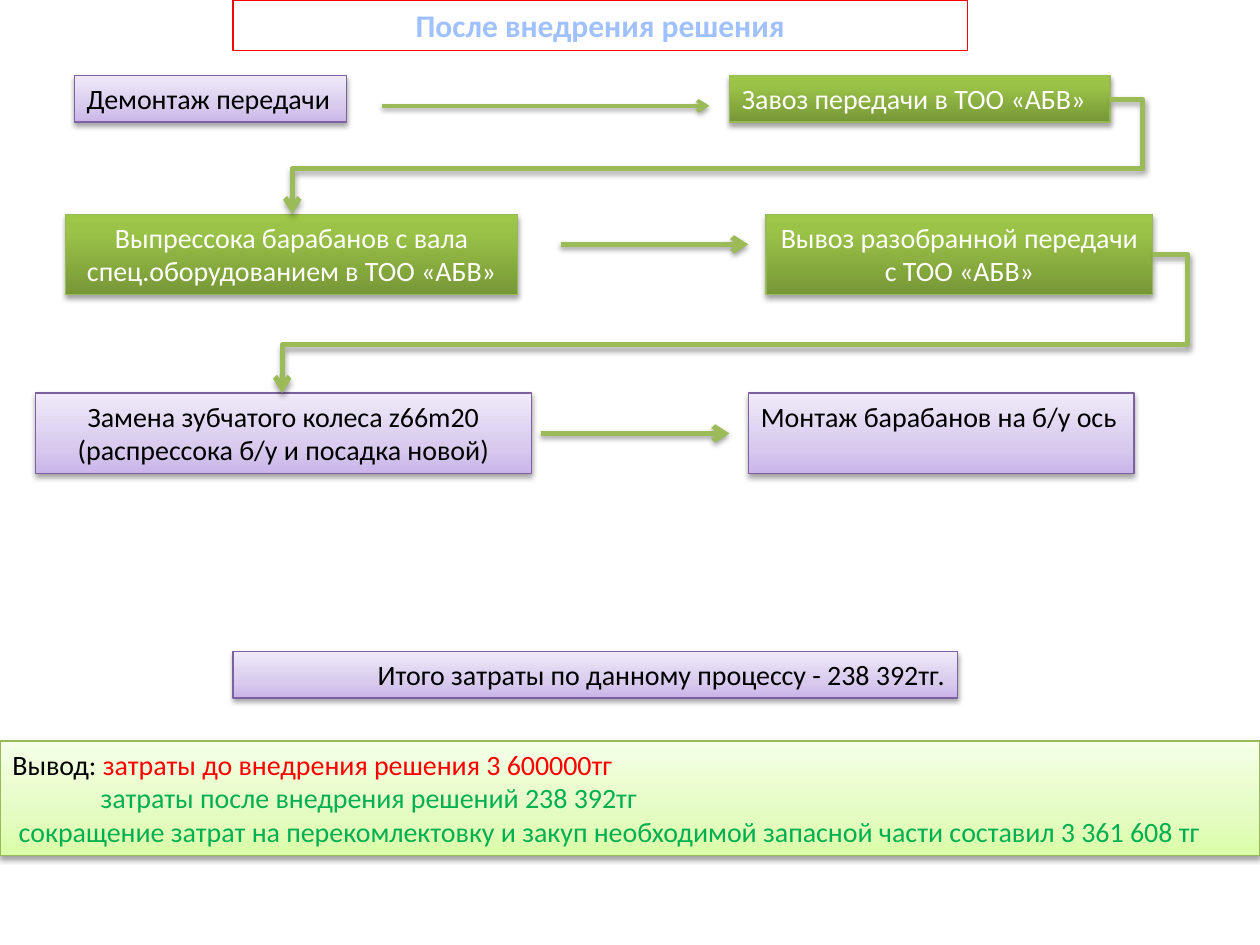
from lxml.etree import SubElement as Sub
from pptx import Presentation
from pptx.dml.color import RGBColor as RGB
from pptx.enum.shapes import MSO_CONNECTOR as Link, MSO_SHAPE as Shape
from pptx.enum.text import MSO_ANCHOR as Anchor, PP_ALIGN as Align
from pptx.oxml.ns import qn
from pptx.util import Inches, Pt

COLORS = {
    "black": "000000", "white": "FFFFFF", "red": "FF0000",
    "green": "00B050", "title": "A0C1FF", "arrow": "9BBB59",
}
# Each look: border, gradient stops from bottom to top
LOOKS = {
    "violet": ("7D60A0", [(0, "C9B5E8"), (35, "D8CBEE"), (100, "F0EAF9")]),
    "olive": ("98B955", [(0, "779737"), (80, "9BC348"), (100, "9DC746")]),
    "lime": ("98B955", [(0, "DAFDA7"), (35, "E4FCC2"), (100, "F5FFE7")]),
    "plain": ("FF0000", []),
}
COLS, ROWS = 100, 75


class Board:
    """Draws on one slide; lengths are columns and rows of a 100 x 75 grid."""

    font, size = "Calibri", 16

    def __init__(self, deck):
        self.slide = deck.slides.add_slide(deck.slide_layouts[6])
        self.col = deck.slide_width / COLS
        self.row = deck.slide_height / ROWS

    def spot(self, x, y):
        return round(x * self.col), round(y * self.row)

    def shade(self, effects):
        shadow = Sub(effects, qn("a:outerShdw"), blurRad=str(Pt(3.1)),
                     dist=str(Pt(1.7)), dir="5400000", rotWithShape="0")
        color = Sub(shadow, qn("a:srgbClr"), val=COLORS["black"])
        Sub(color, qn("a:alpha"), val="37000")

    def blend(self, shape, stops):
        fill = shape.fill
        fill.gradient()
        fill.gradient_angle = 90
        group = shape.element.spPr.find(".//" + qn("a:gsLst"))
        for old in list(group):
            group.remove(old)
        for share, color in stops:
            stop = Sub(group, qn("a:gs"), pos=str(share * 1000))
            Sub(stop, qn("a:srgbClr"), val=color)

    def box(self, x, y, w, h, look, lines, align=Align.LEFT, wrap=False):
        """Each line is (indent in columns, [(text, colour), ...])."""
        shape = self.slide.shapes.add_shape(
            Shape.RECTANGLE, *self.spot(x, y), *self.spot(w, h))
        edge, stops = LOOKS[look]
        shape.line.color.rgb = RGB.from_string(edge)
        shape.line.width = Pt(0.75)
        shape.shadow.inherit = False
        if stops:
            self.blend(shape, stops)
            self.shade(shape.element.spPr.find(qn("a:effectLst")))
        else:
            shape.fill.background()
        frame = shape.text_frame
        frame.word_wrap = wrap
        frame.vertical_anchor = Anchor.TOP
        for i, (indent, runs) in enumerate(lines):
            par = frame.add_paragraph() if i else frame.paragraphs[0]
            par.alignment = align
            if indent:
                par._p.get_or_add_pPr().set("marL", str(round(indent * self.col)))
            for text, color in runs:
                self.word(par, text, color)
        return shape

    def word(self, par, text, color):
        run = par.add_run()
        run.text = text
        run.font.name = self.font
        run.font.size = Pt(self.size)
        run.font.color.rgb = RGB.from_string(COLORS[color])

    def step(self, x, y, w, h, look, *texts, align=Align.CENTER, wrap=False):
        color = "white" if look == "olive" else "black"
        lines = [(0, [(text, color)]) for text in texts]
        return self.box(x, y, w, h, look, lines, align, wrap)

    def title(self, x, y, w, h, text):
        shape = self.box(x, y, w, h, "plain", [(0, [(text, "title")])],
                         Align.CENTER, True)
        font = shape.text_frame.paragraphs[0].runs[0].font
        font.size, font.bold = Pt(18), True

    def arrow(self, start, end, width=3, bends=None):
        """Straight, or with bends (two shares of its extent) four-part."""
        kind = Link.ELBOW if bends else Link.STRAIGHT
        link = self.slide.shapes.add_connector(
            kind, *self.spot(*start), *self.spot(*end))
        link.line.color.rgb = RGB.from_string(COLORS["arrow"])
        link.line.width = Pt(width)
        props = link._element.spPr
        Sub(props.find(qn("a:ln")), qn("a:tailEnd"), type="arrow")
        self.shade(Sub(props, qn("a:effectLst")))
        if bends:
            geom = props.find(qn("a:prstGeom"))
            geom.set("prst", "bentConnector4")
            guides = geom.find(qn("a:avLst"))
            for i, share in enumerate(bends, 1):
                Sub(guides, qn("a:gd"), name=f"adj{i}",
                    fmla=f"val {round(share * 100000)}")


def main():
    deck = Presentation()
    deck.slide_width, deck.slide_height = Inches(10), Inches(7.5)
    board = Board(deck)

    board.title(18.5, 0, 58.3, 4, "После внедрения решения")

    board.step(5.9, 6, 21.6, 3.7, "violet", "Демонтаж передачи",
               align=Align.LEFT)
    board.step(57.9, 6, 30.2, 3.7, "olive", "Завоз передачи в ТОО «АБВ»",
               align=Align.LEFT)
    board.step(5.2, 17, 35.9, 6.4, "olive", "Выпрессока барабанов с вала",
               "спец.оборудованием в ТОО «АБВ»")
    board.step(60.8, 17, 30.7, 6.4, "olive", "Вывоз разобранной передачи",
               "с ТОО «АБВ»")
    board.step(2.8, 31.2, 39.4, 6.4, "violet",
               "Замена зубчатого колеса z66m20 (распрессока б/у и посадка новой)",
               wrap=True)
    board.step(59.4, 31.2, 30.6, 6.4, "violet", "Монтаж барабанов на б/у ось",
               align=Align.LEFT)

    board.arrow((30.3, 8.4), (56.3, 8.4), width=2.25)
    board.arrow((44.5, 19.4), (59.4, 19.4))
    board.arrow((42.9, 34.4), (57.9, 34.4))
    board.arrow((88.1, 7.9), (23.2, 17), bends=(-0.04, 0.6))
    board.arrow((91.5, 20.2), (22.4, 31.2), bends=(-0.04, 0.65))

    board.step(18.5, 51.7, 57.5, 3.7, "violet",
               "Итого затраты по данному процессу - 238 392тг.",
               align=Align.RIGHT, wrap=True)
    board.box(0, 58.8, 100, 9.1, "lime", [
        (0, [("Вывод: ", "black"),
             ("затраты до внедрения решения 3 600000тг", "red")]),
        (7, [("затраты после внедрения решений 238 392тг", "green")]),
        (0.5, [("сокращение затрат на перекомлектовку и закуп необходимой "
                "запасной части составил 3 361 608 тг", "green")]),
    ], wrap=True)

    deck.save("out.pptx")


if __name__ == "__main__":
    main()
